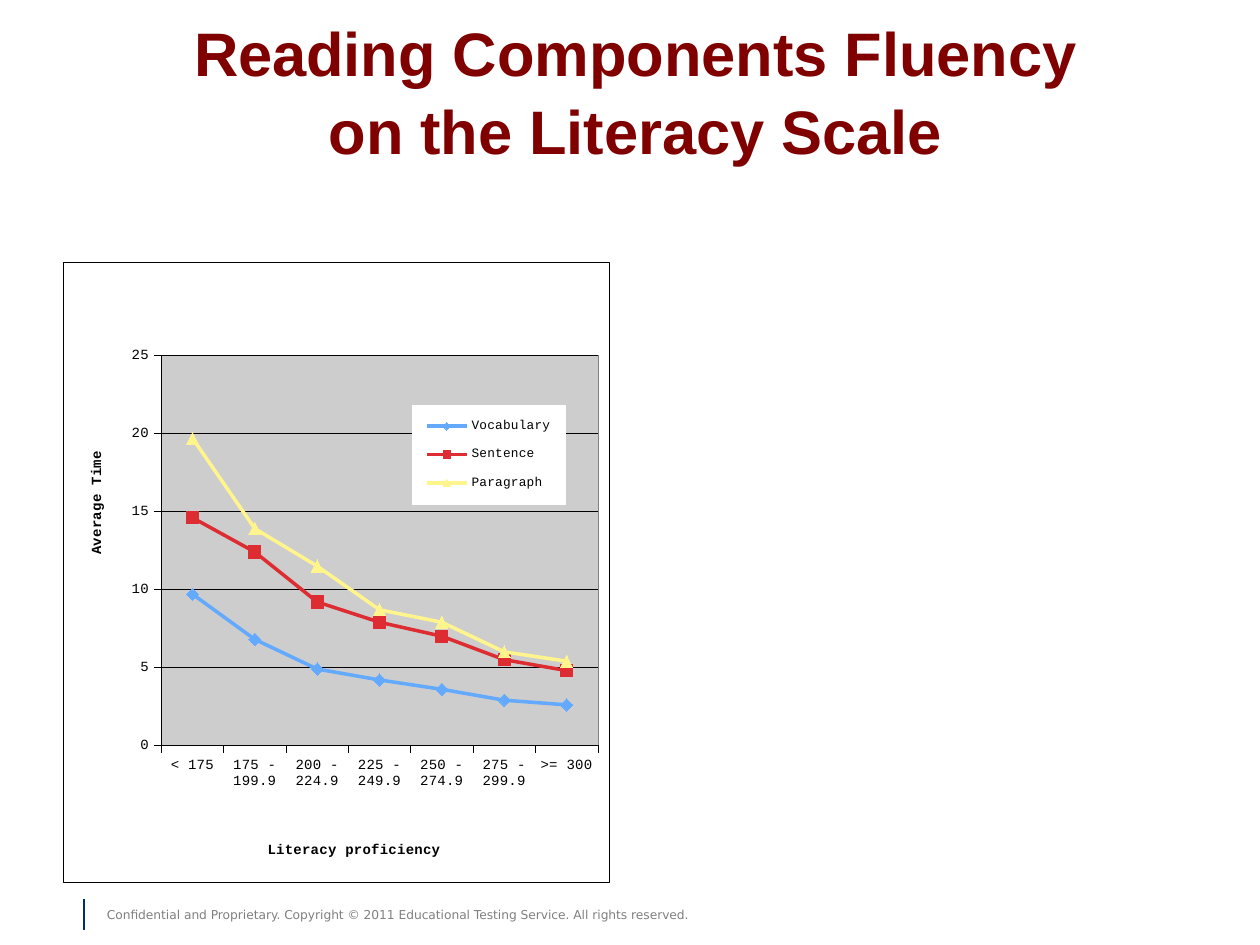
from dataclasses import dataclass

import lxml.etree
import pptx
import pptx.chart.data
import pptx.dml.color
import pptx.enum.chart
import pptx.enum.shapes
import pptx.enum.text
import pptx.oxml
import pptx.oxml.ns
import pptx.util

Pt = pptx.util.Pt
Marker = pptx.enum.chart.XL_MARKER_STYLE
qn = pptx.oxml.ns.qn


@dataclass(frozen=True)
class Theme:
    heading: str = "800000"
    ink: str = "000000"
    footer: str = "808080"
    rule: str = "003067"
    paper: str = "FFFFFF"
    plot: str = "CDCDCD"
    title_font: str = "Arial"
    chart_font: str = "Courier New"
    footer_font: str = "DejaVu Sans"
    title_size: float = 35.1
    chart_size: float = 8
    legend_size: float = 7.3
    footer_size: float = 7
    hairline: float = 0.25


@dataclass(frozen=True)
class Series:
    name: str
    values: tuple[float, ...]
    color: str
    marker: Marker


THEME = Theme()
BANDS = ("< 175", "175 - 199.9", "200 - 224.9", "225 - 249.9",
         "250 - 274.9", "275 - 299.9", ">= 300")
SERIES = (
    Series("Vocabulary", (9.7, 6.8, 4.9, 4.2, 3.6, 2.9, 2.6), "63AAFE", Marker.DIAMOND),
    Series("Sentence", (14.6, 12.4, 9.2, 7.9, 7, 5.5, 4.8), "DD2D32", Marker.SQUARE),
    Series("Paragraph", (19.7, 13.9, 11.5, 8.7, 7.9, 6, 5.4), "FFF58C", Marker.TRIANGLE),
)


def rgb(color: str) -> pptx.dml.color.RGBColor:
    return pptx.dml.color.RGBColor.from_string(color)


def style_font(font, *, name: str, size: float, color: str, bold: bool = False) -> None:
    font.name, font.size, font.bold = name, Pt(size), bold
    font.color.rgb = rgb(color)


def style_line(line, color: str, width: float) -> None:
    line.color.rgb = rgb(color)
    line.width = Pt(width)


def write_text(frame, text: str, *, align=None, spacing=None, **font_format) -> None:
    """Put one formatted paragraph into a text frame."""
    para = frame.paragraphs[0]
    para.alignment = align
    para.line_spacing = spacing
    span = para.add_run()
    span.text = text
    style_font(span.font, **font_format)


def set_layout(parent, index: int, inner: bool = False, **fractions: float) -> None:
    """Place a chart part by fractions of the chart area."""
    for old in parent.findall(qn("c:layout")):
        parent.remove(old)
    layout = lxml.etree.Element(qn("c:layout"))
    manual = lxml.etree.SubElement(layout, qn("c:manualLayout"))
    settings = {"layoutTarget": "inner"} if inner else {}
    settings |= {"xMode": "edge", "yMode": "edge"} | fractions
    for key, value in settings.items():
        lxml.etree.SubElement(manual, qn(f"c:{key}")).set("val", str(value))
    parent.insert(index, layout)


def area_format(fill: str, border: str):
    """Make the fill and border of a chart area."""
    return pptx.oxml.parse_xml(
        f'<c:spPr {pptx.oxml.ns.nsdecls("c", "a")}>'
        f'<a:solidFill><a:srgbClr val="{fill}"/></a:solidFill>'
        f'<a:ln w="{Pt(THEME.hairline)}"><a:solidFill><a:srgbClr val="{border}"/>'
        '</a:solidFill></a:ln></c:spPr>')


def format_axis(axis, title: str, x: float, y: float) -> None:
    axis.major_tick_mark = pptx.enum.chart.XL_TICK_MARK.OUTSIDE
    axis.minor_tick_mark = pptx.enum.chart.XL_TICK_MARK.NONE
    style_line(axis.format.line, THEME.ink, THEME.hairline)
    style_font(axis.tick_labels.font, name=THEME.chart_font,
               size=THEME.chart_size, color=THEME.ink)
    write_text(axis.axis_title.text_frame, title, name=THEME.chart_font,
               size=THEME.chart_size, color=THEME.ink, bold=True)
    set_layout(axis.axis_title._element, 1, x=x, y=y)


def format_series(plot_series, series: Series) -> None:
    plot_series.smooth = False
    style_line(plot_series.format.line, series.color, 2)
    marker = plot_series.marker
    marker.style, marker.size = series.marker, 7
    marker.format.fill.solid()
    marker.format.fill.fore_color.rgb = rgb(series.color)
    style_line(marker.format.line, series.color, 0.75)


def add_fluency_chart(page) -> None:
    data = pptx.chart.data.CategoryChartData()
    data.categories = BANDS
    for series in SERIES:
        data.add_series(series.name, series.values)
    chart = page.shapes.add_chart(
        pptx.enum.chart.XL_CHART_TYPE.LINE_MARKERS,
        Pt(36), Pt(150), Pt(312), Pt(354), data).chart
    chart.has_title = False
    style_font(chart.font, name=THEME.chart_font, size=THEME.chart_size, color=THEME.ink)
    chart.plots[0].vary_by_categories = False
    for plot_series, series in zip(chart.plots[0].series, SERIES):
        format_series(plot_series, series)

    # Axes
    format_axis(chart.category_axis, "Literacy proficiency", 0.37, 0.93)
    values = chart.value_axis
    format_axis(values, "Average Time", 0.04, 0.3)
    values.axis_title.text_frame._txBody.bodyPr.set("rot", "-5400000")
    values.minimum_scale, values.maximum_scale, values.major_unit = 0, 25, 5
    values.tick_labels.number_format = "0"
    values.tick_labels.number_format_is_linked = False
    style_line(values.major_gridlines.format.line, THEME.ink, THEME.hairline)

    # Legend inside the plot
    chart.has_legend = True
    legend = chart.legend
    legend.position = pptx.enum.chart.XL_LEGEND_POSITION.RIGHT
    legend.include_in_layout = False
    style_font(legend.font, name=THEME.chart_font, size=THEME.legend_size, color=THEME.ink)
    set_layout(legend._element, 1, x=0.64, y=0.23, w=0.28, h=0.16)
    legend._element.find(qn("c:overlay")).addnext(area_format(THEME.paper, THEME.paper))

    # Plot and chart backgrounds
    chart_part = chart._chartSpace.find(qn("c:chart"))
    plot_area = chart_part.find(qn("c:plotArea"))
    set_layout(plot_area, 0, inner=True, x=0.18, y=0.15, w=0.8, h=0.63)
    plot_area.append(area_format(THEME.plot, THEME.footer))
    chart_part.addnext(area_format(THEME.paper, THEME.ink))


def add_title(page) -> None:
    title = page.shapes.title
    title.left, title.top, title.width, title.height = Pt(96), Pt(0), Pt(534), Pt(102)
    title.text_frame.vertical_anchor = pptx.enum.text.MSO_ANCHOR.MIDDLE
    write_text(title.text_frame, "Reading Components Fluency on the Literacy Scale",
               align=pptx.enum.text.PP_ALIGN.CENTER, spacing=1.05, name=THEME.title_font,
               size=THEME.title_size, color=THEME.heading, bold=True)


def add_footer(page) -> None:
    box = page.shapes.add_textbox(Pt(54), Pt(515), Pt(450), Pt(16))
    box.text_frame.word_wrap = True
    write_text(box.text_frame,
               "Confidential and Proprietary. Copyright © 2011 Educational Testing Service. "
               "All rights reserved.",
               name=THEME.footer_font, size=THEME.footer_size, color=THEME.footer)
    rule = page.shapes.add_connector(
        pptx.enum.shapes.MSO_CONNECTOR.STRAIGHT, Pt(48), Pt(513.5), Pt(48), Pt(531.5))
    style_line(rule.line, THEME.rule, 0.75)
    lxml.etree.SubElement(rule._element.spPr, qn("a:effectLst"))


def main() -> None:
    deck = pptx.Presentation()
    deck.slide_width, deck.slide_height = Pt(720), Pt(540)
    page = deck.slides.add_slide(deck.slide_layouts[5])
    add_footer(page)
    add_title(page)
    add_fluency_chart(page)
    deck.save("out.pptx")


if __name__ == "__main__":
    main()
